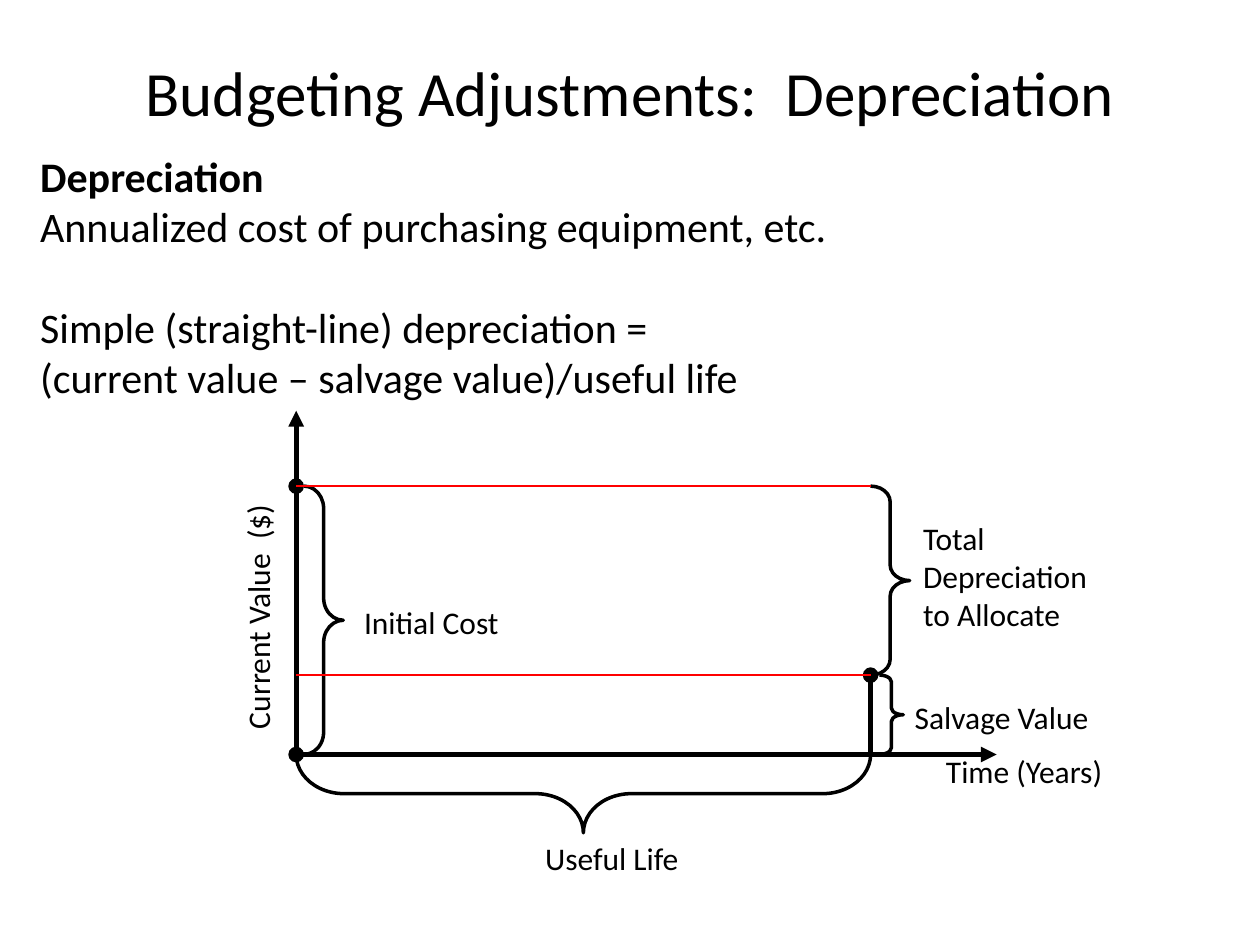
from dataclasses import dataclass

from lxml.etree import SubElement
from pptx import Presentation
from pptx.dml.color import RGBColor
from pptx.enum.shapes import MSO_CONNECTOR, MSO_SHAPE
from pptx.enum.text import MSO_ANCHOR, PP_ALIGN
from pptx.oxml.ns import qn
from pptx.util import Cm, Pt

FONT = "Calibri"
BLACK = "000000"
RED = "FF0000"
START_X, END_X = 5.97, 17.55
COST_Y, SALVAGE_Y, BASE_Y = 9.8, 13.61, 15.21


@dataclass
class Label:
    text: str
    left: float
    top: float
    width: float
    height: float = 1.02
    size: int = 18
    rotation: int = 0


@dataclass
class Line:
    x1: float
    y1: float
    x2: float
    y2: float
    color: str = BLACK
    weight: float = 3
    head: str = ""
    tail: str = ""


@dataclass
class Brace:
    left: float
    top: float
    width: float
    height: float
    curve: float
    rotation: int = 0


LINES = [
    Line(START_X, 14.27, START_X, 8.28, tail="triangle"),
    Line(START_X, BASE_Y, 20.09, BASE_Y, tail="triangle"),
    Line(START_X, BASE_Y, START_X, COST_Y, head="oval", tail="oval"),
    Line(END_X, BASE_Y, END_X, SALVAGE_Y, tail="oval"),
    Line(END_X, SALVAGE_Y, START_X, SALVAGE_Y, RED, 0.75),
    Line(END_X, COST_Y, START_X, COST_Y, RED, 0.75),
]

LIFE_SPAN = END_X - START_X
LIFE_DEPTH = 1.58
BRACES = [
    Brace((START_X + END_X - LIFE_DEPTH) / 2,
          BASE_Y + (LIFE_DEPTH - LIFE_SPAN) / 2,
          LIFE_DEPTH, LIFE_SPAN, 0.61, 90),
    Brace(17.73, SALVAGE_Y, 0.48, BASE_Y - SALVAGE_Y, 0.28),
    Brace(6.13, COST_Y, 0.79, BASE_Y - COST_Y, 0.57),
    Brace(END_X, COST_Y, 0.79, SALVAGE_Y - COST_Y, 0.4),
]

LABELS = [
    Label("Current Value  ($)", 2.49, 11.73, 5.41, rotation=270),
    Label("Time (Years)", 18.82, 15.04, 4.29),
    Label("Initial Cost", 7.09, 12.04, 3.51),
    Label("Salvage Value", 18.19, 13.94, 4.45),
    Label("Useful Life", 10.74, 16.79, 3.51),
    Label("Total Depreciation to Allocate", 18.36, 10.34, 3.96, 2.57),
]

TITLE = Label("Budgeting Adjustments:  Depreciation", 1.27, 0.76, 22.86, 2.16, 36)
BODY = Label(
    "Depreciation\n"
    "Annualized cost of purchasing equipment, etc.\n"
    "Simple (straight-line) depreciation =\n"
    "(current value – salvage value)/useful life",
    0.56, 2.9, 24.36, 5.38, 24,
)


def rgb(color: str) -> RGBColor:
    return RGBColor.from_string(color)


def add_label(s, label: Label):
    box = s.shapes.add_textbox(
        Cm(label.left), Cm(label.top), Cm(label.width), Cm(label.height))
    box.rotation = label.rotation
    tf = box.text_frame
    tf.word_wrap = True
    tf.text = label.text
    for p in tf.paragraphs:
        for r in p.runs:
            r.font.name = FONT
            r.font.size = Pt(label.size)
            r.font.color.rgb = rgb(BLACK)
    return tf


def add_line(s, line: Line) -> None:
    connector = s.shapes.add_connector(
        MSO_CONNECTOR.STRAIGHT,
        Cm(line.x1), Cm(line.y1), Cm(line.x2), Cm(line.y2))
    connector.line.color.rgb = rgb(line.color)
    connector.line.width = Pt(line.weight)
    ln = connector.line._get_or_add_ln()
    for tag, kind in (("a:headEnd", line.head), ("a:tailEnd", line.tail)):
        if kind:
            SubElement(ln, qn(tag), type=kind)
    SubElement(connector._element.spPr, qn("a:effectLst"))


def add_brace(s, brace: Brace) -> None:
    sp = s.shapes.add_shape(
        MSO_SHAPE.RIGHT_BRACE,
        Cm(brace.left), Cm(brace.top), Cm(brace.width), Cm(brace.height))
    sp.adjustments[0] = brace.curve
    sp.rotation = brace.rotation
    sp.shadow.inherit = False
    sp.fill.background()
    sp.line.color.rgb = rgb(BLACK)
    sp.line.width = Pt(2)


def main() -> None:
    prs = Presentation()
    prs.slide_width, prs.slide_height = Cm(25.4), Cm(19.05)
    s = prs.slides.add_slide(prs.slide_layouts[6])

    title = add_label(s, TITLE)
    title.vertical_anchor = MSO_ANCHOR.MIDDLE
    title.paragraphs[0].alignment = PP_ALIGN.CENTER

    for brace in BRACES:
        add_brace(s, brace)
    for line in LINES:
        add_line(s, line)
    for label in LABELS:
        add_label(s, label)

    body = add_label(s, BODY)
    body.paragraphs[0].runs[0].font.bold = True
    body.paragraphs[2].space_before = Pt(29)

    prs.save("out.pptx")


if __name__ == "__main__":
    main()
